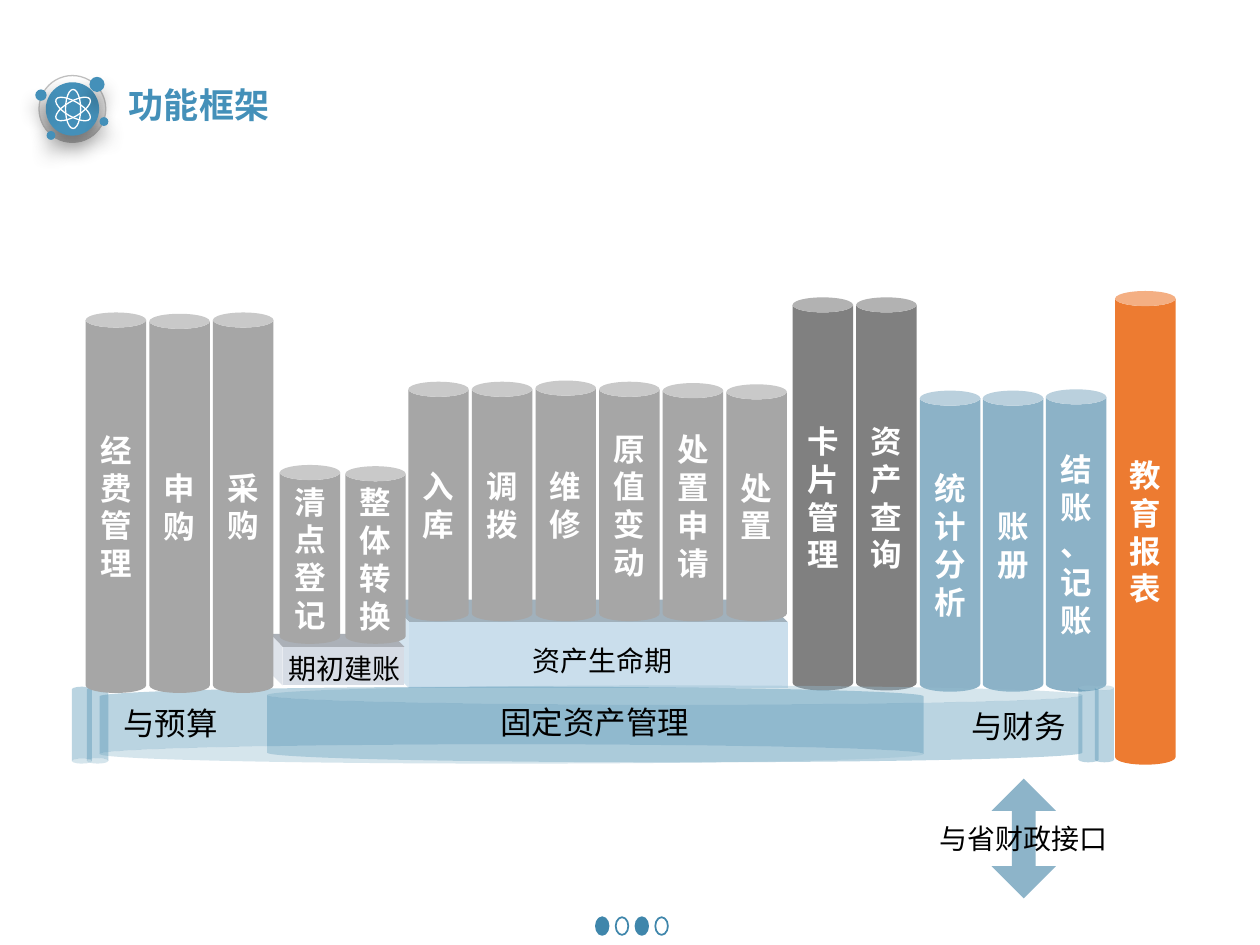
from lxml.etree import SubElement
from pptx import Presentation
from pptx.dml.color import RGBColor
from pptx.enum.shapes import MSO_SHAPE as Shape
from pptx.enum.text import MSO_ANCHOR as Anchor, MSO_AUTO_SIZE as AutoSize, PP_ALIGN as Align
from pptx.oxml.ns import qn
from pptx.util import Inches, Pt

FONT = "Noto Sans CJK SC"
BLUE, DOT_BLUE, BASE_BLUE = "4490B9", "3F86AB", "4F91B2"
GRAY, DARK_GRAY, STEEL, ORANGE = "A6A6A6", "808080", "8CB2C7", "ED7B31"
WHITE, BLACK = "FFFFFF", "000000"
CAN_WIDTH = 0.48

# Each row: left, step, bottom, colour, then (top, label) for every cylinder.
LIFE_CYCLE = (3.24, 0.505, 4.93, GRAY, [
    (3.03, "入库"), (3.03, "调拨"), (3.02, "维修"),
    (3.03, "原值变动"), (3.04, "处置申请"), (3.05, "处置")])
RECORDS = (6.29, 0.505, 5.48, DARK_GRAY, [(2.36, "卡片管理"), (2.36, "资产查询")])
FINANCE = (7.3, 0.5, 5.49, STEEL, [(3.1, "统计分析"), (3.1, "账册"), (3.09, "结账\n、记账")])
REPORTS = (8.85, 0.5, 6.07, ORANGE, [(2.31, "教育报表")])
OPENING = (2.22, 0.52, 5.11, GRAY, [(3.69, "清点登记"), (3.7, "整体转换")])
BUDGET = (0.68, 0.505, 5.5, GRAY, [(2.48, "经费管理"), (2.49, "申购"), (2.48, "采购")])

BASE_CANS = [
    (2.12, 5.44, 6.47, 0), (8.56, 5.44, 0.16, 0), (8.69, 5.44, 0.15, 0),
    (0.79, 5.45, 6.54, 180), (0.69, 5.45, 0.17, 180), (0.57, 5.45, 0.16, 180)]
BASE_LABELS = [
    (3.87, 5.53, 1.91, "固定资产管理"), (0.88, 5.54, 1.02, "与预算"), (7.61, 5.56, 0.96, "与财务")]
ICON_DOTS = [(0.71, 0.61, 0.12), (0.28, 0.71, 0.09), (0.37, 1.04, 0.07), (0.79, 0.93, 0.07)]


def color(code):
    """Turn a hex string into a colour."""
    return RGBColor.from_string(code)


def write(frame, text, size=18, code=BLACK, bold=False, align=Align.LEFT, wrap=True):
    """Fill a text frame, one paragraph per line of text."""
    frame.word_wrap = wrap
    for index, line in enumerate(text.split("\n")):
        para = frame.paragraphs[0] if index == 0 else frame.add_paragraph()
        para.alignment = align
        span = para.add_run()
        span.text = line
        span.font.size = Pt(size)
        span.font.bold = bold
        span.font.color.rgb = color(code)
        span.font.name = FONT
        SubElement(span.font._element, qn("a:ea"), typeface=FONT)


def add_label(page, place, text, **style):
    """Add a text box that grows with its text."""
    box = page.shapes.add_textbox(*map(Inches, place))
    box.text_frame.auto_size = AutoSize.SHAPE_TO_FIT_TEXT
    write(box.text_frame, text, **style)


def add_figure(page, kind, place, fill=None, line=None, width=1, rotation=0, alpha=None):
    """Add a preset shape without a shadow."""
    figure = page.shapes.add_shape(kind, *map(Inches, place))
    figure.shadow.inherit = False
    figure.rotation = rotation
    if fill:
        figure.fill.solid()
        figure.fill.fore_color.rgb = color(fill)
    else:
        figure.fill.background()
    if line:
        figure.line.color.rgb = color(line)
        figure.line.width = Pt(width)
    else:
        figure.line.fill.background()
    if alpha:
        tint = figure._element.spPr.find(qn("a:solidFill"))[0]
        SubElement(tint, qn("a:alpha"), val=str(alpha * 1000))
    return figure


def add_shadow(figure):
    """Cast a soft shadow straight down."""
    effects = figure._element.spPr.find(qn("a:effectLst"))
    shadow = SubElement(effects, qn("a:outerShdw"), blurRad=str(Pt(11)), dist=str(Pt(8)),
                        dir="5400000", algn="t", rotWithShape="0")
    tint = SubElement(shadow, qn("a:srgbClr"), val=BLACK)
    SubElement(tint, qn("a:alpha"), val="40000")


def add_cylinders(page, left, step, bottom, fill, items):
    """Add a row of labelled cylinders that share a bottom edge."""
    for index, (top, text) in enumerate(items):
        place = (left + index * step, top, CAN_WIDTH, bottom - top)
        can = add_figure(page, Shape.CAN, place, fill)
        can.text_frame.vertical_anchor = Anchor.MIDDLE
        write(can.text_frame, text, code=WHITE, bold=True, align=Align.CENTER)


def add_page_dots(page):
    """Add the alternating filled and hollow dots at the foot."""
    for index in range(4):
        fill = DOT_BLUE if index % 2 == 0 else None
        add_figure(page, Shape.OVAL, (4.73 + index * 0.157, 7.28, 0.1, 0.14), fill, DOT_BLUE)


def add_heading(page):
    """Add the title and the ringed disc beside it."""
    add_label(page, (0.92, 0.61, 1.32, 0.44), "功能框架", size=20, code=BLUE, bold=True,
              align=Align.CENTER, wrap=False)
    ring = add_figure(page, Shape.OVAL, (0.31, 0.6, 0.53, 0.53), WHITE, "BFBFBF", 0.75)
    ring.fill.gradient()
    ring.fill.gradient_angle = 270
    for stop, code in zip(ring.fill.gradient_stops, (WHITE, "BFBFBF")):
        stop.color.rgb = color(code)
    add_shadow(add_figure(page, Shape.OVAL, (0.37, 0.66, 0.41, 0.41), BLUE, BLUE))
    for left, top, size in ICON_DOTS:
        add_shadow(add_figure(page, Shape.OVAL, (left, top, size, size), BLUE))


def add_atom(page):
    """Add three crossing orbits on the disc."""
    for angle in (30, 90, 150):
        add_figure(page, Shape.OVAL, (0.52, 0.71, 0.12, 0.31), line=WHITE, width=0.75,
                   rotation=angle - 30)


def add_base(page):
    """Add the translucent lying base and its labels."""
    for left, top, width, rotation in BASE_CANS:
        add_figure(page, Shape.CAN, (left, top, width, 0.61), BASE_BLUE,
                   rotation=rotation, alpha=39)
    for left, top, width, text in BASE_LABELS:
        add_label(page, (left, top, width, 0.4), text)


def add_interface_arrow(page):
    """Add the double arrow to the outside interface."""
    arrow = add_figure(page, Shape.UP_DOWN_ARROW, (7.87, 6.18, 0.51, 0.95), "8DB4C9")
    arrow.adjustments[0] = 0.5
    arrow.adjustments[1] = 0.37
    arrow.text_frame.vertical_anchor = Anchor.MIDDLE
    write(arrow.text_frame, "与省财政接口", size=16, align=Align.CENTER, wrap=False)


def main():
    """Build the slide and save it."""
    deck = Presentation()
    deck.slide_width, deck.slide_height = Inches(10), Inches(7.5)
    page = deck.slides.add_slide(deck.slide_layouts[6])
    add_page_dots(page)
    add_figure(page, Shape.CUBE, (4.31, 3.52, 0.7, 3.18), "CADEEC", rotation=270)
    add_label(page, (4.13, 5.06, 1.58, 0.37), "资产生命期", size=16)
    add_heading(page)
    for row in (LIFE_CYCLE, RECORDS, FINANCE, REPORTS):
        add_cylinders(page, *row)
    add_figure(page, Shape.CUBE, (2.47, 4.7, 0.41, 1.07), "D6DCE5", rotation=270)
    add_label(page, (2.19, 5.12, 1.18, 0.37), "期初建账", size=16)
    add_base(page)
    for row in (OPENING, BUDGET):
        add_cylinders(page, *row)
    add_interface_arrow(page)
    add_atom(page)
    deck.save("out.pptx")


if __name__ == "__main__":
    main()
